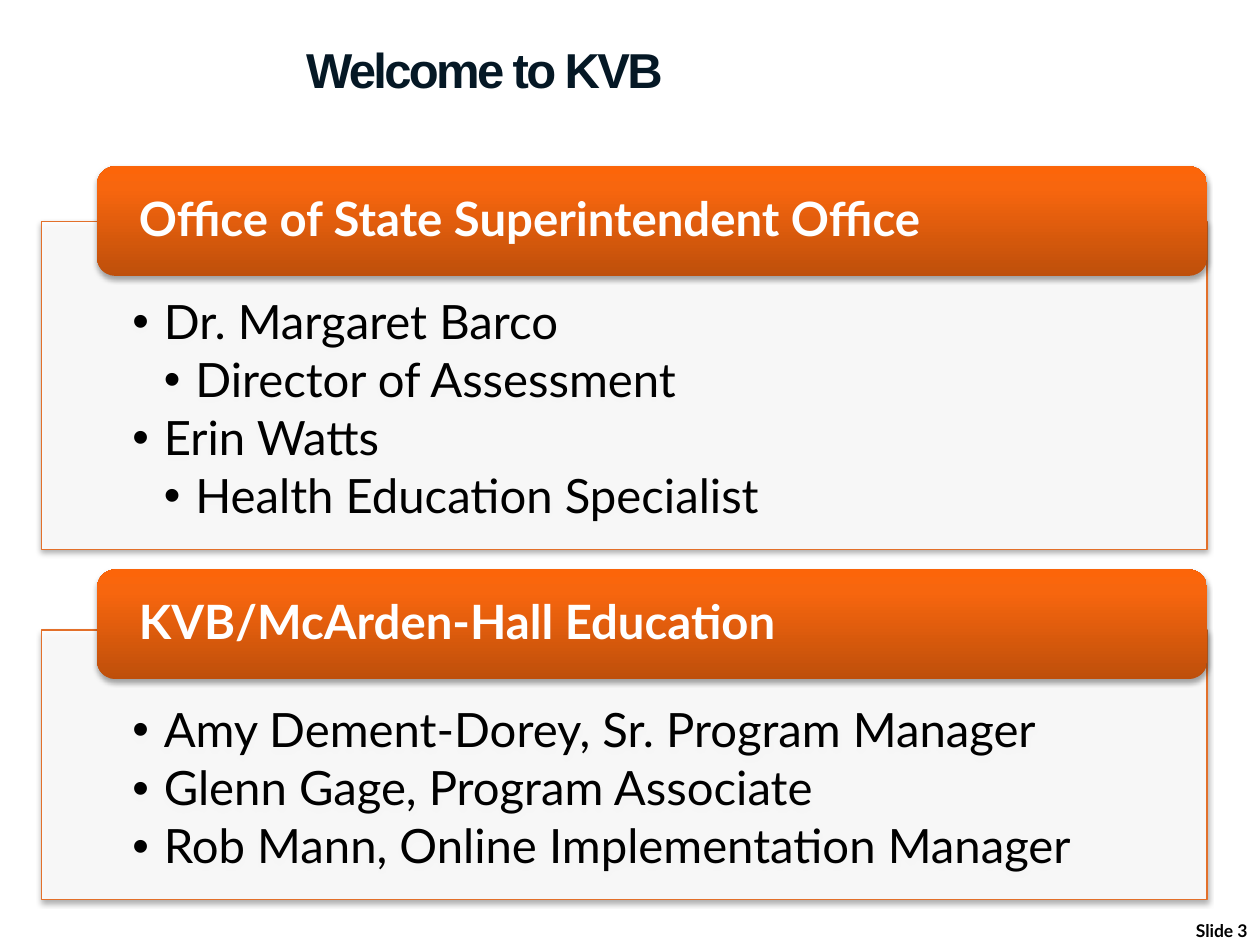
from copy import deepcopy
from dataclasses import dataclass

from lxml import etree
from pptx import Presentation
from pptx import oxml
from pptx.dml.color import RGBColor
from pptx.enum import shapes, text
from pptx.oxml.ns import nsdecls, qn
from pptx.util import Inches, Pt


@dataclass(frozen=True)
class Theme:
    ink: RGBColor = RGBColor(0x00, 0x00, 0x00)
    paper: RGBColor = RGBColor(0xFF, 0xFF, 0xFF)
    title: RGBColor = RGBColor(0x05, 0x18, 0x25)
    outline: RGBColor = RGBColor(0xE3, 0x70, 0x2A)
    banner: tuple = ((0, "BE4F0B"), (0.8, "F7660E"), (1, "FC6509"))
    heading_font: str = "Arial"
    body_font: str = "Lato"
    title_size: int = 28
    body_size: int = 27
    footer_size: int = 10


@dataclass(frozen=True)
class Team:
    name: str
    banner_top: float
    panel_top: float
    panel_height: float
    members: tuple[tuple[int, str], ...]


THEME = Theme()
TEAMS = (
    Team("Office of State Superintendent Office", 1.32, 1.76, 2.6, (
        (0, "Dr. Margaret Barco"),
        (1, "Director of Assessment"),
        (0, "Erin Watts"),
        (1, "Health Education Specialist"),
    )),
    Team("KVB/McArden-Hall Education", 4.52, 5, 2.14, (
        (0, "Amy Dement-Dorey, Sr. Program Manager"),
        (0, "Glenn Gage, Program Associate"),
        (0, "Rob Mann, Online Implementation Manager"),
    )),
)


def place(shape, left: float, top: float, width: float, height: float) -> None:
    """Move and size a shape, in inches."""
    shape.left, shape.top = Inches(left), Inches(top)
    shape.width, shape.height = Inches(width), Inches(height)


def set_frame(frame, anchor, left: float, top: float, right: float, bottom: float) -> None:
    """Set wrapping, anchor and insets of a text frame."""
    frame.word_wrap = True
    frame.auto_size = text.MSO_AUTO_SIZE.NONE
    frame.vertical_anchor = anchor
    frame.margin_left, frame.margin_top = Inches(left), Inches(top)
    frame.margin_right, frame.margin_bottom = Inches(right), Inches(bottom)


def style(paragraph, font_name: str, size: int, color: RGBColor, bold: bool, align) -> None:
    """Set the font and alignment of a paragraph."""
    paragraph.alignment = align
    font = paragraph.font
    font.name, font.size, font.bold = font_name, Pt(size), bold
    font.color.rgb = color


def add_shadow(shape) -> None:
    """Give a shape a soft shadow below it."""
    shape.shadow.inherit = False
    effects = shape._element.spPr.find(qn("a:effectLst"))
    effects.append(oxml.parse_xml(
        f'<a:outerShdw {nsdecls("a")} blurRad="{Pt(3.1)}" dist="{Pt(1.8)}" '
        'dir="5400000" rotWithShape="0"><a:srgbClr val="000000">'
        '<a:alpha val="35000"/></a:srgbClr></a:outerShdw>'))


def draw_panel(panel, team: Team) -> None:
    """Turn a body placeholder into a team's panel of members."""
    place(panel, 0.33, team.panel_top, 9.25, team.panel_height)
    panel.fill.solid()
    panel.fill.fore_color.rgb = THEME.paper
    fill_color = panel._element.spPr.find(qn("a:solidFill"))[0]
    etree.SubElement(fill_color, qn("a:alpha"), val="90000")
    panel.line.color.rgb = THEME.outline
    panel.line.width = Pt(0.75)
    add_shadow(panel)
    frame = panel.text_frame
    set_frame(frame, text.MSO_ANCHOR.TOP, 0.72, 0.61, 0.72, 0.21)
    for index, (level, member) in enumerate(team.members):
        entry = frame.add_paragraph() if index else frame.paragraphs[0]
        entry.text, entry.level = member, level
        entry.line_spacing = 0.9
        entry.space_before, entry.space_after = Pt(0), Pt(4)
        props = entry._p.get_or_add_pPr()
        props.set("marL", str(Inches(0.25 * (level + 1))))
        props.set("indent", str(Inches(-0.25)))
        etree.SubElement(props, qn("a:buChar"), char="•")
        style(entry, THEME.body_font, THEME.body_size, THEME.ink, False, text.PP_ALIGN.LEFT)


def draw_banner(slide, team: Team) -> None:
    """Draw the gradient banner with a team's name."""
    banner = slide.shapes.add_shape(
        shapes.MSO_SHAPE.ROUNDED_RECTANGLE,
        Inches(0.77), Inches(team.banner_top), Inches(8.81), Inches(0.87))
    banner.fill.gradient()
    banner.fill.gradient_angle = 90
    stops = banner._element.spPr.find(qn("a:gradFill")).find(qn("a:gsLst"))
    stops.append(deepcopy(stops[0]))
    for stop, (position, color) in zip(banner.fill.gradient_stops, THEME.banner):
        stop.position = position
        stop.color.rgb = RGBColor.from_string(color)
    banner.line.fill.background()
    add_shadow(banner)
    set_frame(banner.text_frame, text.MSO_ANCHOR.MIDDLE, 0.29, 0, 0.29, 0)
    heading = banner.text_frame.paragraphs[0]
    heading.text = team.name
    heading.line_spacing = 0.9
    style(heading, THEME.body_font, THEME.body_size, THEME.paper, True, text.PP_ALIGN.LEFT)


def draw_title(title) -> None:
    """Fill and place the slide title."""
    place(title, 2.33, 0, 7.67, 0.83)
    set_frame(title.text_frame, text.MSO_ANCHOR.BOTTOM, 0.1, 0.05, 0.1, 0.05)
    welcome = title.text_frame.paragraphs[0]
    welcome.text = "Welcome to KVB"
    welcome.runs[0]._r.get_or_add_rPr().set("spc", "-150")
    style(welcome, THEME.heading_font, THEME.title_size, THEME.title, True, text.PP_ALIGN.LEFT)


def draw_slide_number(slide) -> None:
    """Write the slide number in the bottom right corner."""
    footer = slide.shapes.add_textbox(Inches(9.25), Inches(7.25), Inches(0.75), Inches(0.25))
    set_frame(footer.text_frame, text.MSO_ANCHOR.TOP, 0.1, 0.05, 0.1, 0.05)
    number = footer.text_frame.paragraphs[0]
    number.text = "Slide 3"
    style(number, THEME.body_font, THEME.footer_size, THEME.ink, True, text.PP_ALIGN.RIGHT)


def main() -> None:
    """Build the welcome slide."""
    deck = Presentation()
    deck.slide_width, deck.slide_height = Inches(10), Inches(7.5)
    slide = deck.slides.add_slide(deck.slide_layouts.get_by_name("Two Content"))
    title, *panels = slide.placeholders
    draw_title(title)
    for panel, team in zip(panels, TEAMS):
        draw_panel(panel, team)
        draw_banner(slide, team)
    draw_slide_number(slide)
    deck.save("out.pptx")


if __name__ == "__main__":
    main()
